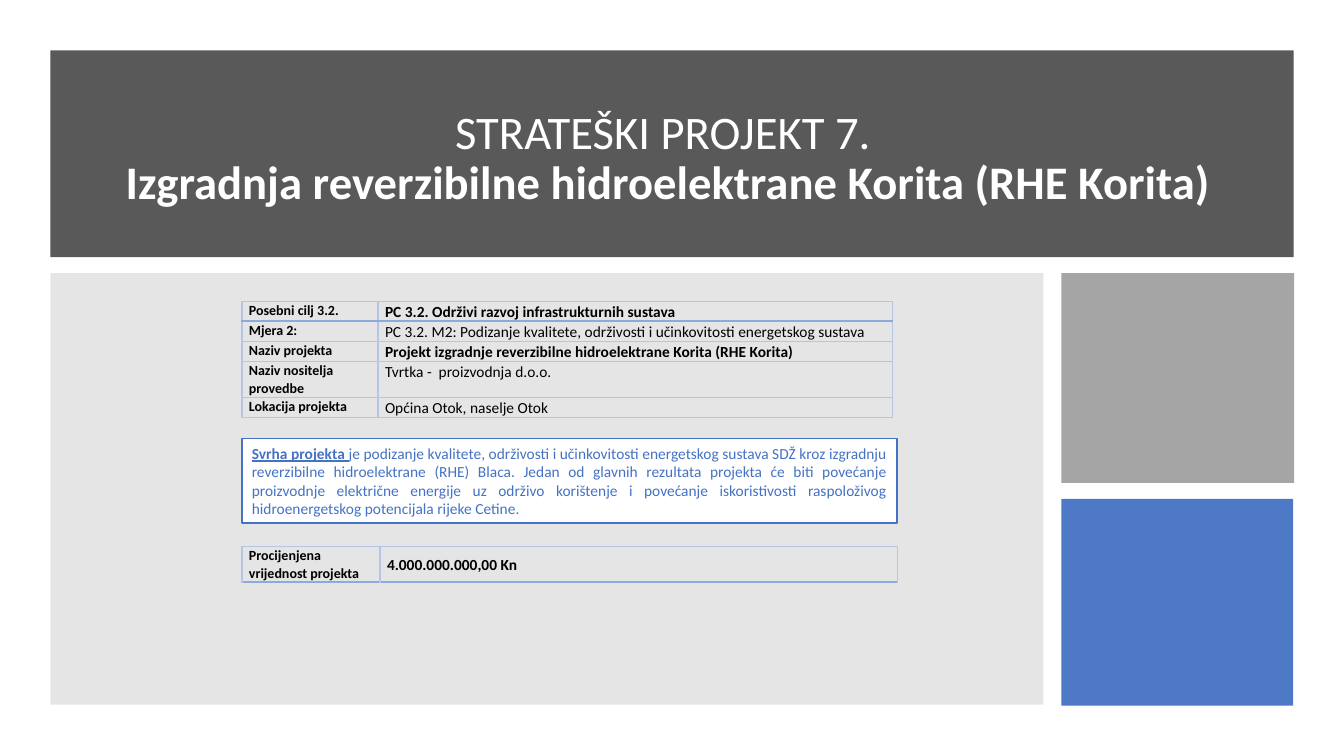
from dataclasses import dataclass
from lxml.etree import SubElement
from pptx import Presentation
from pptx.dml.color import RGBColor
from pptx.enum.shapes import MSO_SHAPE
from pptx.enum.text import MSO_ANCHOR, MSO_AUTO_SIZE, PP_ALIGN
from pptx.oxml.ns import qn
from pptx.util import Inches, Pt


@dataclass(frozen=True)
class Theme:
    """Colours, type sizes and the grid module of the slide."""
    font: str = "Calibri"
    white: str = "FFFFFF"
    black: str = "000000"
    band: str = "595959"
    panel: str = "808080"
    grey: str = "A5A5A5"
    blue: str = "4472C4"
    rule: str = "B4C6E7"
    strong_rule: str = "8EAADB"
    title_size: float = 33.3
    body_size: float = 11
    label_size: float = 10
    module: float = 0.1
    columns: float = 133.33
    rows: float = 75


THEME = Theme()
MARGIN = 5
LOWER_TOP = 27.1
CONTENT_LEFT = 24
CONTENT_WIDTH = 65

PROJECT_FACTS = [
    ("Posebni cilj 3.2.", "PC 3.2. Održivi razvoj infrastrukturnih sustava", True, 1.9),
    ("Mjera 2:", "PC 3.2. M2: Podizanje kvalitete, održivosti i učinkovitosti "
     "energetskog sustava", False, 2),
    ("Naziv projekta", "Projekt izgradnje reverzibilne hidroelektrane Korita (RHE Korita)",
     True, 1.9),
    ("Naziv nositelja provedbe", "Tvrtka -  proizvodnja d.o.o.", False, 3.6),
    ("Lokacija projekta", "Općina Otok, naselje Otok", False, 1.9),
]
ESTIMATED_VALUE = [("Procijenjena vrijednost projekta", "4.000.000.000,00 Kn", True, 3.5)]
PURPOSE = (
    "je podizanje kvalitete, održivosti i učinkovitosti energetskog sustava SDŽ kroz "
    "izgradnju reverzibilne hidroelektrane (RHE) Blaca. Jedan od glavnih rezultata projekta "
    "će biti povećanje proizvodnje električne energije uz održivo korištenje i povećanje "
    "iskoristivosti raspoloživog hidroenergetskog potencijala rijeke Cetine. "
)


def grid(*modules):
    """Turn counts of grid modules into lengths."""
    return [Inches(count * THEME.module) for count in modules]


def add_run(paragraph, words, size, colour, bold=False, underline=False):
    """Add one formatted run to a paragraph."""
    run = paragraph.add_run()
    run.text = words
    run.font.name = THEME.font
    run.font.size = Pt(size)
    run.font.bold = bold
    run.font.underline = underline
    run.font.color.rgb = RGBColor.from_string(colour)


def add_block(slide, area, colour, opacity=100):
    """Draw a plain rectangle on the grid."""
    block = slide.shapes.add_shape(MSO_SHAPE.RECTANGLE, *grid(*area))
    block.shadow.inherit = False
    block.fill.solid()
    block.fill.fore_color.rgb = RGBColor.from_string(colour)
    block.line.fill.background()
    if opacity < 100:
        tint = block.element.spPr.find(f"{qn('a:solidFill')}/{qn('a:srgbClr')}")
        SubElement(tint, qn("a:alpha"), val=str(opacity * 1000))
    return block


def fill_title(slide, band, area):
    """Place the two-line heading over its band."""
    title = slide.shapes.title
    band.element.addnext(title.element)
    title.left, title.top, title.width, title.height = grid(*area)
    frame = title.text_frame
    frame.word_wrap = True
    frame.auto_size = MSO_AUTO_SIZE.NONE
    frame.vertical_anchor = MSO_ANCHOR.MIDDLE
    heading = frame.paragraphs[0]
    heading.alignment = PP_ALIGN.CENTER
    heading.line_spacing = 0.9
    add_run(heading, "STRATEŠKI PROJEKT 7. ", THEME.title_size, THEME.white)
    heading.add_line_break()
    add_run(heading, "Izgradnja reverzibilne hidroelektrane Korita (RHE Korita)",
            THEME.title_size, THEME.white, bold=True)


def add_purpose(slide, area):
    """Add the outlined statement of the project's purpose."""
    purpose = add_block(slide, area, THEME.white)
    purpose.line.color.rgb = RGBColor.from_string(THEME.blue)
    purpose.line.width = Pt(1)
    frame = purpose.text_frame
    frame.word_wrap = True
    frame.auto_size = MSO_AUTO_SIZE.SHAPE_TO_FIT_TEXT
    statement = frame.paragraphs[0]
    statement.alignment = PP_ALIGN.JUSTIFY
    add_run(statement, "Svrha projekta ", THEME.body_size, THEME.blue, True, True)
    add_run(statement, PURPOSE, THEME.body_size, THEME.blue)


def set_borders(cell, strong_sides):
    """Rule all sides of a cell, with the named sides heavier."""
    properties = cell._tc.get_or_add_tcPr()
    for side in "LRTB":
        strong = side in strong_sides
        width = Pt(1.5 if strong else 1)
        border = SubElement(properties, qn(f"a:ln{side}"), w=str(width))
        paint = SubElement(border, qn("a:solidFill"))
        SubElement(paint, qn("a:srgbClr"), val=THEME.strong_rule if strong else THEME.rule)


def fill_cell(cell, words, size, bold, alignment, strong_sides):
    """Write and format one table cell."""
    set_borders(cell, strong_sides)
    cell.fill.background()
    cell.margin_left = cell.margin_right = Inches(0.07)
    cell.margin_top = cell.margin_bottom = 0
    entry = cell.text_frame.paragraphs[0]
    entry.alignment = alignment
    entry.line_spacing = 1.07
    entry.space_after = Pt(8)
    add_run(entry, words, size, THEME.black, bold)


def add_facts(slide, top, widths, facts, alignment):
    """Add a table of labels and values with a heavier rule under its first row."""
    heights = [fact[-1] for fact in facts]
    area = grid(CONTENT_LEFT, top, sum(widths), sum(heights))
    table = slide.shapes.add_table(len(facts), 2, *area).table
    table.first_row = table.horz_banding = False
    for column, width in zip(table.columns, grid(*widths)):
        column.width = width
    for index, (label, value, bold, height) in enumerate(facts):
        row = table.rows[index]
        row.height, = grid(height)
        strong_sides = {0: "B", 1: "T"}.get(index, "")
        fill_cell(row.cells[0], label, THEME.label_size, True, PP_ALIGN.LEFT, strong_sides)
        fill_cell(row.cells[1], value, THEME.body_size, bold, alignment, strong_sides)
    return table


def main():
    """Build and save the project slide."""
    deck = Presentation()
    deck.slide_width, deck.slide_height = grid(THEME.columns, THEME.rows)
    slide = deck.slides.add_slide(deck.slide_layouts[5])

    band = add_block(slide, (MARGIN, MARGIN, THEME.columns - 2 * MARGIN, 20.5), THEME.band)
    fill_title(slide, band, (8, 8, 116.6, 15.6))
    add_block(slide, (MARGIN, LOWER_TOP, 98.5, 42.8), THEME.panel, 20)
    add_block(slide, (105.3, LOWER_TOP, 23.1, 20.8), THEME.grey)
    add_block(slide, (105.3, 49.5, 23, 20.5), THEME.blue, 95)

    add_purpose(slide, (CONTENT_LEFT, 43.5, CONTENT_WIDTH, 8.4))
    estimate = add_facts(slide, 54.2, (13.7, 51.3), ESTIMATED_VALUE, PP_ALIGN.LEFT)
    estimate.cell(0, 1).vertical_anchor = MSO_ANCHOR.MIDDLE
    add_facts(slide, 29.9, (13.5, 51), PROJECT_FACTS, PP_ALIGN.JUSTIFY)
    deck.save("out.pptx")


if __name__ == "__main__":
    main()
